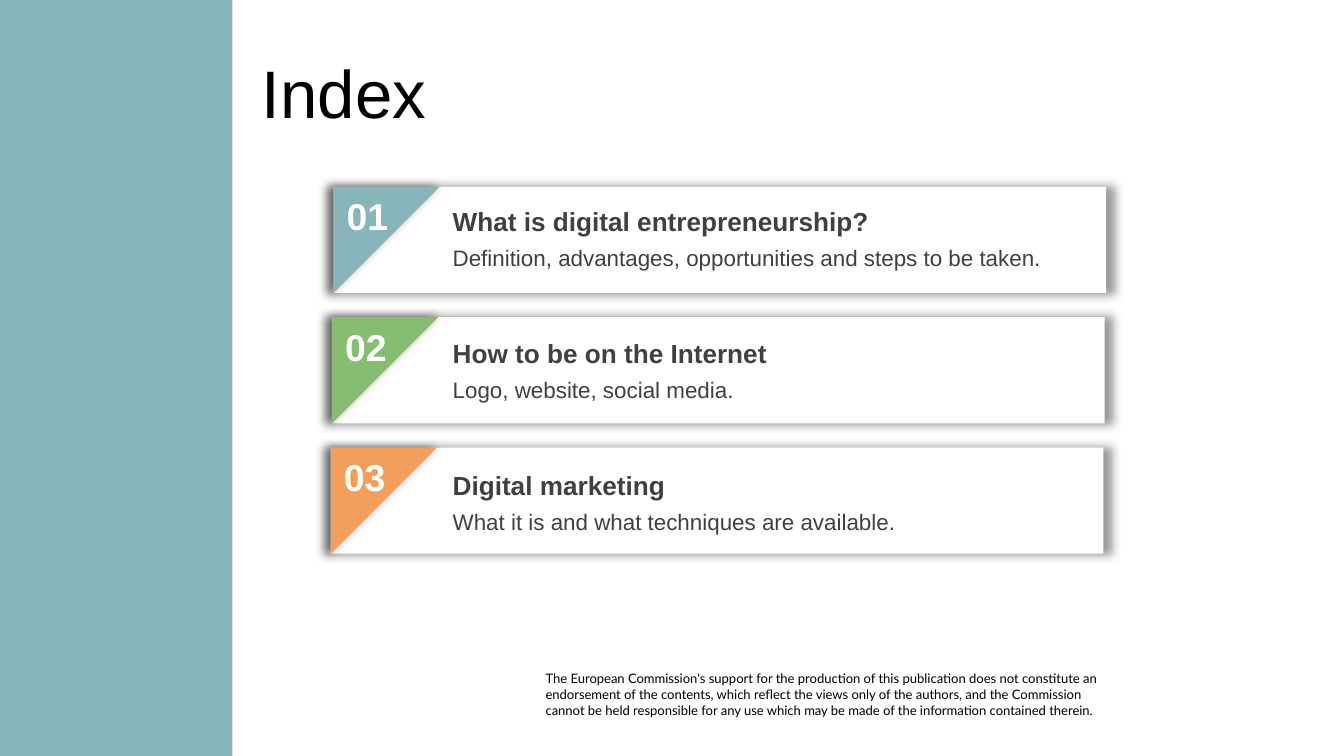
"""Build an index slide with three numbered cards beside a coloured side band."""
import lxml.etree
import pptx
import pptx.dml.color
import pptx.enum.shapes
import pptx.enum.text
import pptx.oxml.ns
import pptx.util
from pptx.util import Inches

RGBColor = pptx.dml.color.RGBColor
TEAL = RGBColor(0x87, 0xB5, 0xBA)
GREEN = RGBColor(0x86, 0xBD, 0x70)
ORANGE = RGBColor(0xF3, 0x9E, 0x5A)
WHITE = RGBColor(0xFF, 0xFF, 0xFF)
BLACK = RGBColor(0, 0, 0)
GREY = RGBColor(0x40, 0x40, 0x40)

RECTANGLE = pptx.enum.shapes.MSO_SHAPE.RECTANGLE
TRIANGLE = pptx.enum.shapes.MSO_SHAPE.RIGHT_TRIANGLE

SLIDE_WIDTH = 10
SLIDE_HEIGHT = SLIDE_WIDTH * 9 / 16
CARD_LEFT, CARD_TOP = 2.48, 1.39
CARD_WIDTH, CARD_HEIGHT = 5.75, 0.79
CARD_SHIFT, CARD_PITCH, TEXT_PITCH = -0.01, 0.97, 0.98

CARDS = [
    ("01", TEAL, "What is digital entrepreneurship?",
     "Definition, advantages, opportunities and steps to be taken."),
    ("02", GREEN, "How to be on the Internet", "Logo, website, social media."),
    ("03", ORANGE, "Digital marketing", "What it is and what techniques are available."),
]
DISCLAIMER = [
    "The European Commission's support for the production of this publication does not "
    "constitute an endorsement of the contents, which reflect the views only of the authors, "
    "and the Commission",
    "cannot be held responsible for any use which may be made of the information "
    "contained therein.",
]


def add_block(slide, kind, left, top, width, height, color):
    shape = slide.shapes.add_shape(
        kind, Inches(left), Inches(top), Inches(width), Inches(height))
    shape.shadow.inherit = False
    shape.fill.solid()
    shape.fill.fore_color.rgb = color
    shape.line.fill.background()
    return shape


def add_glow_shadow(shape):
    qn = pptx.oxml.ns.qn
    effects = shape._element.spPr.find(qn("a:effectLst"))
    shadow = lxml.etree.SubElement(
        effects, qn("a:outerShdw"), blurRad=str(pptx.util.Pt(5)),
        sx="102000", sy="102000", algn="ctr", rotWithShape="0")
    color = lxml.etree.SubElement(shadow, qn("a:srgbClr"), val=str(BLACK))
    lxml.etree.SubElement(color, qn("a:alpha"), val="40000")


def add_text(slide, left, top, width, height, lines, size, color,
             bold=False, font_name="Arial"):
    box = slide.shapes.add_textbox(
        Inches(left), Inches(top), Inches(width), Inches(height))
    frame = box.text_frame
    frame.word_wrap = True
    for index, line in enumerate(lines):
        paragraph = frame.add_paragraph() if index else frame.paragraphs[0]
        run = paragraph.add_run()
        run.text = line
        run.font.name = font_name
        run.font.size = pptx.util.Pt(size)
        run.font.bold = bold
        run.font.color.rgb = color
    return frame


def add_card(slide, index, number, color, heading, description):
    left = CARD_LEFT + index * CARD_SHIFT
    top = CARD_TOP + index * CARD_PITCH
    text_offset = index * TEXT_PITCH
    card = add_block(slide, RECTANGLE, left, top, CARD_WIDTH, CARD_HEIGHT, WHITE)
    add_glow_shadow(card)
    corner = add_block(slide, TRIANGLE, left, top, CARD_HEIGHT, CARD_HEIGHT, color)
    corner.rotation = 90
    add_glow_shadow(corner)
    add_text(slide, left, top, 0.58, 0.44, [number], 20, WHITE, bold=True)
    add_text(slide, 3.27, 1.48 + text_offset, 4.8, 0.34, [heading], 14, GREY, bold=True)
    add_text(slide, 3.27, 1.77 + text_offset, 4.8, 0.3, [description], 12, GREY)


def main():
    presentation = pptx.Presentation()
    presentation.slide_width = Inches(SLIDE_WIDTH)
    presentation.slide_height = Inches(SLIDE_HEIGHT)
    slide = presentation.slides.add_slide(presentation.slide_layouts[6])

    disclaimer = add_text(slide, 4.06, 4.99, 4.17, 0.35, DISCLAIMER, 7, BLACK,
                          font_name="Lato")
    disclaimer.margin_left = disclaimer.margin_right = 0
    disclaimer.margin_top = disclaimer.margin_bottom = 0
    add_block(slide, RECTANGLE, 0, 0, 1.73, SLIDE_HEIGHT, TEAL)
    title = add_text(slide, 1.85, 0.37, 7.2, 0.63, ["Index"], 36, BLACK)
    title.vertical_anchor = pptx.enum.text.MSO_ANCHOR.MIDDLE
    for index, card in enumerate(CARDS):
        add_card(slide, index, *card)

    presentation.save("out.pptx")


if __name__ == "__main__":
    main()
